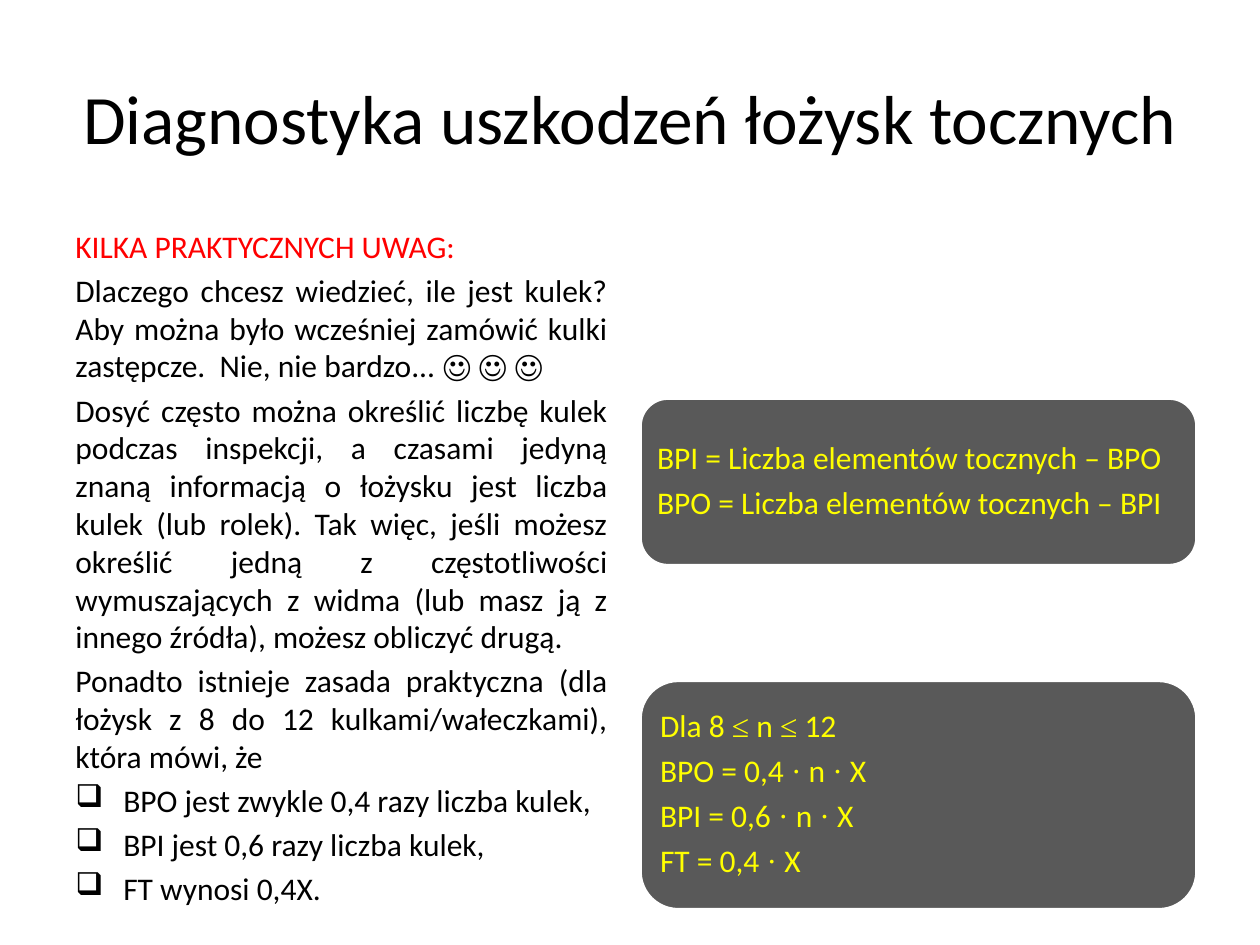
from itertools import groupby

from lxml import etree
from pptx import Presentation
from pptx.dml.color import RGBColor
from pptx.enum.shapes import MSO_SHAPE as Shape
from pptx.enum.text import MSO_ANCHOR as Anchor, PP_ALIGN as Align
from pptx.oxml.ns import qn
from pptx.util import Inches, Pt

BLACK = RGBColor(0x00, 0x00, 0x00)
WHITE = RGBColor(0xFF, 0xFF, 0xFF)
RED = RGBColor(0xFF, 0x00, 0x00)
YELLOW = RGBColor(0xFF, 0xFF, 0x00)
GREY = RGBColor(0x59, 0x59, 0x59)

TITLE = "Diagnostyka uszkodzeń łożysk tocznych"
HEADING = "KILKA PRAKTYCZNYCH UWAG:"
REMARKS = [
    "Dlaczego chcesz wiedzieć, ile jest kulek? Aby można było wcześniej "
    "zamówić kulki zastępcze.  Nie, nie bardzo... ☺ ☺ ☺",
    "Dosyć często można określić liczbę kulek podczas inspekcji, a czasami "
    "jedyną znaną informacją o łożysku jest liczba kulek (lub rolek). Tak "
    "więc, jeśli możesz określić jedną z częstotliwości wymuszających z widma "
    "(lub masz ją z innego źródła), możesz obliczyć drugą.",
    "Ponadto istnieje zasada praktyczna (dla łożysk z 8 do 12 "
    "kulkami/wałeczkami), która mówi, że",
]
RULES = [
    "BPO jest zwykle 0,4 razy liczba kulek,",
    "BPI jest 0,6 razy liczba kulek,",
    "FT wynosi 0,4X.",
]
SUM_FORMULAS = [
    "BPI = Liczba elementów tocznych – BPO",
    "BPO = Liczba elementów tocznych – BPI",
]
RULE_FORMULAS = [
    "Dla 8 ≤ n ≤ 12",
    "BPO = 0,4 · n · X",
    "BPI = 0,6 · n · X",
    "FT = 0,4 · X",
]


class SlideBuilder:
    font_name = "Calibri"
    symbol_font = "Times New Roman"
    symbols = "≤·"
    text_size = 18
    bullet_indent = Inches(0.38)

    def __init__(self, slide):
        self.slide = slide

    def style(self, paragraph, size, color, align):
        paragraph.alignment = align
        paragraph.font.name = self.font_name
        paragraph.font.size = Pt(size)
        paragraph.font.color.rgb = color

    def text_box(self, left, top, width, height):
        box = self.slide.shapes.add_textbox(
            Inches(left), Inches(top), Inches(width), Inches(height))
        box.text_frame.word_wrap = True
        return box.text_frame

    def title(self, text, *place):
        frame = self.text_box(*place)
        frame.vertical_anchor = Anchor.MIDDLE
        frame.text = text
        self.style(frame.paragraphs[0], 39.6, BLACK, Align.CENTER)

    def bullet(self, paragraph):
        properties = paragraph._p.get_or_add_pPr()
        properties.set("marL", str(self.bullet_indent))
        properties.set("indent", str(-self.bullet_indent))
        etree.SubElement(properties, qn("a:buChar")).set("char", "❑")

    def body(self, heading, remarks, rules, *place):
        frame = self.text_box(*place)
        frame.text = "\n".join([heading, *remarks, *rules])
        first_rule = 1 + len(remarks)
        for index, paragraph in enumerate(frame.paragraphs):
            if index > 0:
                paragraph.space_before = Pt(3.6)
            if index >= first_rule:
                self.bullet(paragraph)
            color = BLACK if index else RED
            self.style(paragraph, self.text_size, color, Align.JUSTIFY)

    def formula_panel(self, formulas, left, top, width, height):
        panel = self.slide.shapes.add_shape(
            Shape.ROUNDED_RECTANGLE,
            Inches(left), Inches(top), Inches(width), Inches(height))
        panel.shadow.inherit = False
        panel.fill.solid()
        panel.fill.fore_color.rgb = GREY
        panel.line.color.rgb = WHITE
        panel.line.width = Pt(2)

        frame = panel.text_frame
        frame.word_wrap = True
        frame.vertical_anchor = Anchor.MIDDLE
        frame.margin_left = frame.margin_right = Inches(0.07)
        frame.margin_top = frame.margin_bottom = Inches(0.07)
        for index, formula in enumerate(formulas):
            paragraph = frame.add_paragraph() if index else frame.paragraphs[0]
            paragraph.line_spacing = 0.9
            paragraph.space_after = Pt(6.3)
            self.style(paragraph, self.text_size, YELLOW, Align.LEFT)
            for is_symbol, part in groupby(formula, lambda c: c in self.symbols):
                run = paragraph.add_run()
                run.text = "".join(part)
                if is_symbol:
                    run.font.name = self.symbol_font


def main():
    presentation = Presentation()
    presentation.slide_width = Inches(10)
    presentation.slide_height = Inches(7.5)
    blank_layout = presentation.slide_layouts[6]
    builder = SlideBuilder(presentation.slides.add_slide(blank_layout))

    # Title and remarks on the left
    builder.title(TITLE, 0.5, 0.3, 9, 1.25)
    builder.body(HEADING, REMARKS, RULES, 0.5, 1.75, 4.42, 4.95)

    # Formula panels on the right
    builder.formula_panel(SUM_FORMULAS, 5.08, 3.16, 4.42, 1.33)
    builder.formula_panel(RULE_FORMULAS, 5.08, 5.4, 4.42, 1.82)

    presentation.save("out.pptx")


if __name__ == "__main__":
    main()
